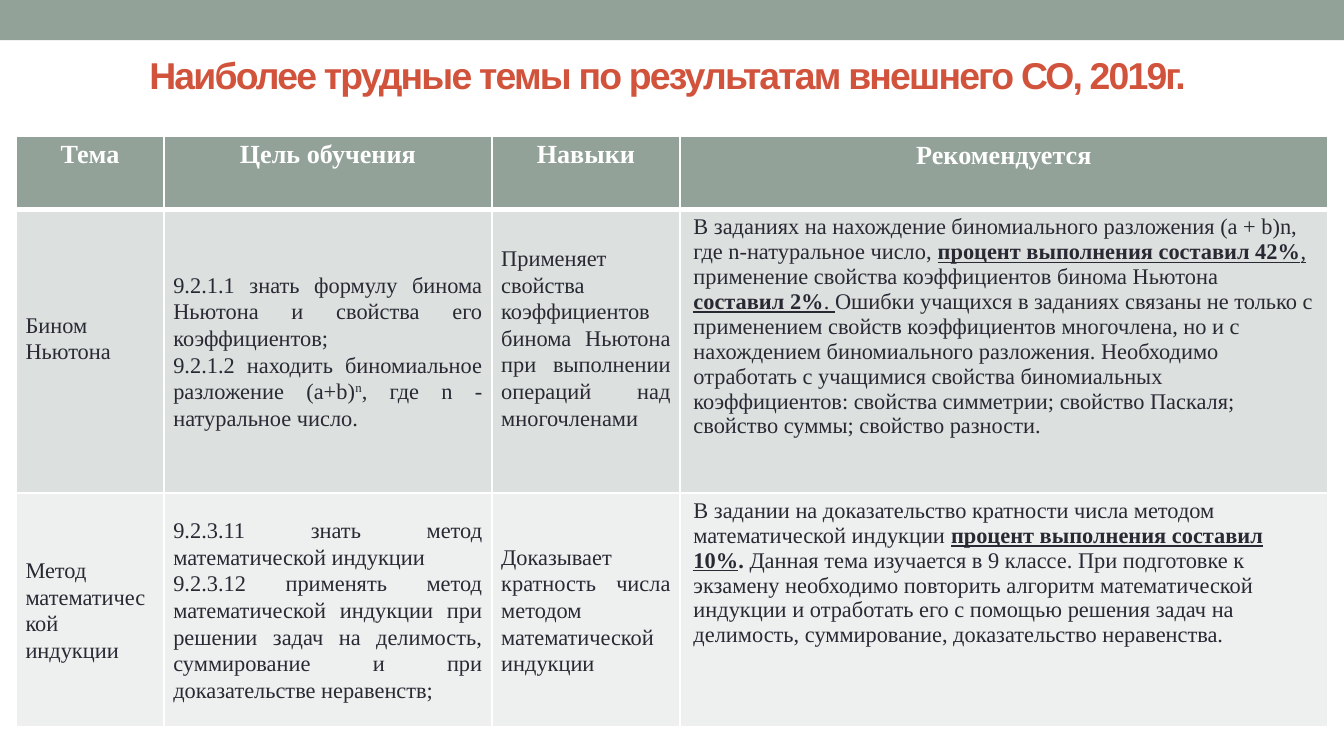
import pptx
import pptx.util
from lxml import etree
from pptx.dml.color import RGBColor
from pptx.enum.shapes import MSO_SHAPE
from pptx.enum.text import MSO_ANCHOR, PP_ALIGN
from pptx.oxml.ns import qn
from pptx.util import Inches

COLORS = {
    "sage": "93A299",
    "accent": "D2533C",
    "ink": "292934",
    "white": "FFFFFF",
    "band_dark": "DCE0DE",
    "band_light": "EEF0EF",
}
SERIF = "Times New Roman"
SLIDE_WIDTH = 10
SLIDE_HEIGHT = SLIDE_WIDTH * 9 / 16
COLUMN_WIDTHS = [1.1, 2.44, 1.4, 4.82]
ROW_HEIGHTS = [0.55, 2.11, 1.74]
ROW_FILLS = ["sage", "band_dark", "band_light"]
BODY_ALIGNMENTS = [PP_ALIGN.LEFT, PP_ALIGN.JUSTIFY, PP_ALIGN.JUSTIFY, PP_ALIGN.LEFT]
HEADERS = ["Тема", "Цель обучения", "Навыки", "Рекомендуется"]

# A cell is a list of paragraphs, a paragraph a list of (text, marks) runs;
# marks: b = bold, u = underlined, ^ = superscript.
TOPICS = [
    [
        [[("Бином Ньютона", "")]],
        [
            [("9.2.1.1 знать формулу бинома Ньютона и свойства его коэффициентов;", "")],
            [
                ("9.2.1.2 находить биномиальное разложение (a+b)", ""),
                ("n", "^"),
                (", где n - натуральное число.", ""),
            ],
        ],
        [[("Применяет свойства коэффициентов бинома Ньютона при выполнении "
           "операций над многочленами", "")]],
        [[
            ("В заданиях на нахождение биномиального разложения (a + b)n, "
             "где n-натуральное число, ", ""),
            ("процент выполнения составил 42%", "bu"),
            (", ", "u"),
            ("применение свойства коэффициентов бинома Ньютона ", ""),
            ("составил 2%", "bu"),
            (". ", "u"),
            ("Ошибки учащихся в заданиях связаны не только с применением свойств "
             "коэффициентов многочлена, но и с нахождением биномиального разложения. "
             "Необходимо отработать с учащимися свойства биномиальных коэффициентов: "
             "свойства симметрии; свойство Паскаля; свойство суммы; "
             "свойство разности.", ""),
        ]],
    ],
    [
        [[("Метод математической индукции", "")]],
        [
            [("9.2.3.11 знать метод математической индукции", "")],
            [("9.2.3.12 применять метод математической индукции при решении задач на "
              "делимость, суммирование и при доказательстве неравенств;", "")],
        ],
        [[("Доказывает кратность числа методом математической индукции", "")]],
        [[
            ("В задании на доказательство кратности числа методом "
             "математической индукции ", ""),
            ("процент выполнения составил 10%", "bu"),
            (". ", "b"),
            ("Данная тема изучается в 9 классе. При подготовке к экзамену необходимо "
             "повторить алгоритм математической индукции и отработать его с помощью "
             "решения задач на делимость, суммирование, доказательство неравенства.", ""),
        ]],
    ],
]


def rgb(name):
    return RGBColor.from_string(COLORS[name])


def set_borders(cell, bottom=1, top=1):
    """White lines round the cell, widths in points."""
    properties = cell._tc.get_or_add_tcPr()
    widths = {"a:lnL": 1, "a:lnR": 1, "a:lnT": top, "a:lnB": bottom}
    for position, (tag, width) in enumerate(widths.items()):
        line = etree.Element(qn(tag), w=str(pptx.util.Pt(width)))
        fill = etree.SubElement(line, qn("a:solidFill"))
        etree.SubElement(fill, qn("a:srgbClr"), val=COLORS["white"])
        properties.insert(position, line)


def set_margins(cell, horizontal, vertical, extra_bottom=0):
    cell.margin_left = cell.margin_right = Inches(horizontal)
    cell.margin_top = Inches(vertical)
    cell.margin_bottom = Inches(vertical + extra_bottom)


def write_paragraphs(cell, paragraphs, size, color, alignment, spacing):
    frame = cell.text_frame
    for index, runs in enumerate(paragraphs):
        paragraph = frame.add_paragraph() if index else frame.paragraphs[0]
        paragraph.alignment = alignment
        paragraph.line_spacing = spacing
        for text, marks in runs:
            run = paragraph.add_run()
            run.text = text
            run.font.name = SERIF
            run.font.size = pptx.util.Pt(size)
            run.font.color.rgb = rgb(color)
            run.font.bold = "b" in marks
            run.font.underline = "u" in marks
            if "^" in marks:
                run._r.get_or_add_rPr().set("baseline", "30000")


def add_top_bar(slide, left, top, width, height):
    bar = slide.shapes.add_shape(
        MSO_SHAPE.RECTANGLE, Inches(left), Inches(top), Inches(width), Inches(height))
    bar.shadow.inherit = False
    bar.fill.solid()
    bar.fill.fore_color.rgb = rgb("sage")
    bar.line.fill.background()


def add_topics_table(slide, left, top, width, height):
    table = slide.shapes.add_table(
        len(ROW_HEIGHTS), len(COLUMN_WIDTHS),
        Inches(left), Inches(top), Inches(width), Inches(height)).table
    for column, share in zip(table.columns, COLUMN_WIDTHS):
        column.width = Inches(width * share / sum(COLUMN_WIDTHS))
    for row, share in zip(table.rows, ROW_HEIGHTS):
        row.height = Inches(height * share / sum(ROW_HEIGHTS))

    header_cells = [[[(header, "b")]] for header in HEADERS]
    for r, contents in enumerate([header_cells] + TOPICS):
        for c, paragraphs in enumerate(contents):
            cell = table.cell(r, c)
            is_header, is_advice = r == 0, c == len(HEADERS) - 1
            cell.fill.solid()
            cell.fill.fore_color.rgb = rgb(ROW_FILLS[r])
            set_borders(cell, bottom=3 if is_header else 1, top=3 if r == 1 else 1)
            # The short texts of the first topic sit a little above the middle.
            raised = r == 1 and c in (0, 2)
            if is_advice:
                set_margins(cell, 0.1, 0.04)
            else:
                set_margins(cell, 0.07, 0, extra_bottom=0.2 if raised else 0)
            cell.vertical_anchor = (
                MSO_ANCHOR.TOP if is_header or is_advice else MSO_ANCHOR.MIDDLE)
            if is_header:
                write_paragraphs(cell, paragraphs, 14, "white", PP_ALIGN.CENTER,
                                 1.0 if is_advice else 1.15)
            else:
                write_paragraphs(cell, paragraphs, 12, "ink", BODY_ALIGNMENTS[c],
                                 1.0 if is_advice else 1.07)


def place_title(slide, left, top, width, height):
    title = slide.shapes.title
    title.left, title.top = Inches(left), Inches(top)
    title.width, title.height = Inches(width), Inches(height)
    title.text_frame.text = "Наиболее трудные темы по результатам внешнего СО, 2019г."
    title.text_frame.word_wrap = True
    title.text_frame.vertical_anchor = MSO_ANCHOR.MIDDLE
    paragraph = title.text_frame.paragraphs[0]
    paragraph.alignment = PP_ALIGN.CENTER
    paragraph.font.name = "Arial"
    paragraph.font.size = pptx.util.Pt(20)
    paragraph.font.bold = True
    paragraph.font.color.rgb = rgb("accent")
    paragraph.runs[0]._r.get_or_add_rPr().set("spc", "-100")


def main():
    presentation = pptx.Presentation()
    presentation.slide_width = Inches(SLIDE_WIDTH)
    presentation.slide_height = Inches(SLIDE_HEIGHT)
    slide = presentation.slides.add_slide(presentation.slide_layouts[5])
    add_top_bar(slide, 0, 0, SLIDE_WIDTH, 0.3)
    place_title(slide, 0.2, 0.27, 9.53, 0.57)
    add_topics_table(slide, 0.12, 1.01, 9.76, 4.4)
    presentation.save("out.pptx")


if __name__ == "__main__":
    main()
